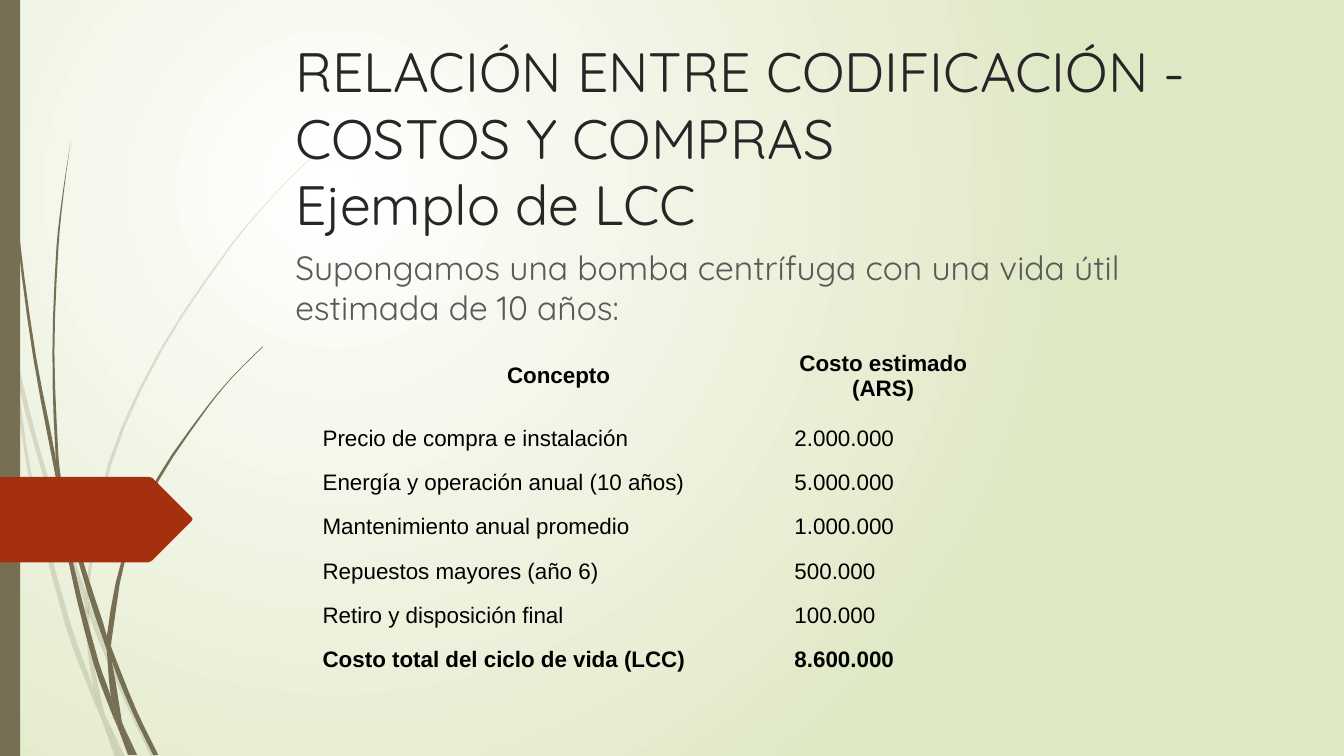
"""Builds the life cycle cost (LCC) example slide."""
from dataclasses import dataclass

from lxml import etree
from pptx import Presentation
from pptx.dml.color import RGBColor
from pptx.enum.shapes import MSO_SHAPE
from pptx.enum.text import MSO_ANCHOR, PP_ALIGN
from pptx.oxml.ns import qn
from pptx.util import Inches, Pt

RECTANGLE = MSO_SHAPE.RECTANGLE
TOP, MIDDLE, BOTTOM = MSO_ANCHOR.TOP, MSO_ANCHOR.MIDDLE, MSO_ANCHOR.BOTTOM
LEFT, CENTER = PP_ALIGN.LEFT, PP_ALIGN.CENTER

TITLE = "RELACIÓN ENTRE CODIFICACIÓN - COSTOS Y COMPRAS\vEjemplo de LCC"
PREMISE = "Supongamos una bomba centrífuga con una vida útil estimada de 10 años:"
COSTS = [
    ("Concepto", "Costo estimado (ARS)"),
    ("Precio de compra e instalación", "2.000.000"),
    ("Energía y operación anual (10 años)", "5.000.000"),
    ("Mantenimiento anual promedio", "1.000.000"),
    ("Repuestos mayores (año 6)", "500.000"),
    ("Retiro y disposición final", "100.000"),
    ("Costo total del ciclo de vida (LCC)", "8.600.000"),
]

# Each blade of grass is a left and a right edge, both from top to bottom.
PALE_BLADES = [
    ([(0, 2.99), (0.1, 3.44), (0.11, 3.5)], [(0, 2.82), (0.09, 3.22), (0.11, 3.5)]),
    ([(0.14, 3.45), (0.17, 3.76), (0.36, 4.49), (0.58, 5.22), (0.84, 5.99)],
     [(0.14, 3.45), (0.36, 4.33), (0.62, 5.2), (0.85, 5.86)]),
    ([(0.88, 5.96), (0.88, 6.1), (1.23, 6.94), (1.5, 7.51)],
     [(0.88, 5.96), (0.92, 6.07), (1.27, 6.92), (1.55, 7.51)]),
    ([(1.05, 7.11), (1.19, 7.51)], [(1.05, 7.11), (1.24, 7.51)]),
    ([(0.11, 3.5), (0.28, 4.7), (0.65, 6.21), (0.92, 6.93), (1.01, 7.14)],
     [(0.11, 3.5), (0.17, 3.76), (0.31, 4.69), (0.7, 6.19), (0.93, 6.83),
      (0.99, 7.07), (1.01, 7.14)]),
    ([(0.84, 5.99), (0.87, 6.46), (0.93, 6.83), (0.96, 6.92), (1.05, 7.11)],
     [(0.84, 5.99), (0.88, 6.08), (0.91, 6.46), (1.03, 7.06), (1.05, 7.11)]),
    ([(3.12, 1.53), (2.89, 1.75), (2.68, 1.97), (2.28, 2.44), (1.58, 3.48),
      (1.07, 4.61), (0.85, 5.84), (0.88, 5.96)],
     [(3.12, 1.54), (2.9, 1.75), (2.68, 1.98), (2.29, 2.45), (1.6, 3.49),
      (1.1, 4.62), (0.88, 5.84), (0.88, 5.96)]),
    ([(1.01, 7.14), (1.14, 7.51)], [(1.01, 7.14), (1.19, 7.51)]),
    ([(0.85, 5.86), (0.84, 5.99), (0.88, 6.1)], [(0.85, 5.86), (0.88, 5.96), (0.88, 6.1)]),
    ([(0.93, 6.83), (0.99, 7.07), (1.01, 7.14), (1.19, 7.51)],
     [(0.93, 6.83), (0.96, 6.92), (1.05, 7.11), (1.19, 7.51)]),
]
DARK_BLADES = [
    ([(0.03, 0), (0.04, 0.48), (0.07, 1.1), (0.17, 2.33), (0.33, 3.55),
      (0.56, 4.77), (0.57, 4.81)],
     [(0.04, 0), (0.05, 0.48), (0.08, 1.09), (0.19, 2.32), (0.36, 3.55),
      (0.55, 4.53), (0.57, 4.81)]),
    ([(0.6, 4.72), (0.64, 5.05), (0.88, 5.92), (1.06, 6.45)],
     [(0.6, 4.72), (0.75, 5.32), (0.93, 5.9), (1.06, 6.31), (1.06, 6.45)]),
    ([(1.1, 6.41), (1.11, 6.56), (1.32, 7.08), (1.52, 7.49)],
     [(1.1, 6.41), (1.13, 6.49), (1.36, 7.06), (1.57, 7.49)]),
    ([(0.57, 4.77), (0.68, 5.57), (0.93, 6.59), (1.11, 7.08), (1.17, 7.22)],
     [(0.57, 4.77), (0.64, 5.05), (0.72, 5.56), (0.98, 6.57), (1.1, 6.91),
      (1.16, 7.17), (1.17, 7.22)]),
    ([(0.7, 1.41), (0.62, 1.93), (0.56, 2.45), (0.52, 3.49), (0.55, 4.49), (0.6, 4.72)],
     [(0.7, 1.41), (0.63, 1.93), (0.58, 2.45), (0.54, 3.49), (0.58, 4.53), (0.6, 4.72)]),
    ([(1.22, 7.19), (1.33, 7.49)], [(1.22, 7.19), (1.36, 7.49)]),
    ([(0.55, 4.49), (0.57, 4.77), (0.64, 5.05)], [(0.55, 4.49), (0.6, 4.72), (0.64, 5.05)]),
    ([(2.6, 3.44), (2.31, 3.73), (2.04, 4.05), (1.56, 4.74), (1.22, 5.51),
      (1.06, 6.31), (1.1, 6.41)],
     [(2.61, 3.44), (2.31, 3.74), (2.05, 4.06), (1.58, 4.76), (1.25, 5.52),
      (1.11, 6.33), (1.1, 6.41)]),
    ([(1.17, 7.22), (1.27, 7.49)], [(1.17, 7.22), (1.31, 7.49)]),
    ([(1.06, 6.45), (1.1, 6.91), (1.16, 7.06), (1.22, 7.19)],
     [(1.06, 6.45), (1.11, 6.56), (1.21, 7.16), (1.22, 7.19)]),
    ([(1.06, 6.31), (1.06, 6.45), (1.11, 6.56)], [(1.06, 6.31), (1.1, 6.41), (1.11, 6.56)]),
    ([(1.1, 6.91), (1.16, 7.17), (1.17, 7.22), (1.3, 7.49)],
     [(1.1, 6.91), (1.16, 7.06), (1.22, 7.19), (1.33, 7.49)]),
]
ARROW = [(0, 4.73), (1.47, 4.73), (1.51, 4.74), (1.9, 5.13), (1.91, 5.15),
         (1.9, 5.17), (1.51, 5.56), (1.47, 5.58), (0, 5.58)]

WIDTH, HEIGHT = 13.33, 7.5
TEXT_LEFT, TEXT_WIDTH = 2.83, 9.75
TITLE_TOP, PREMISE_TOP, PREMISE_BOTTOM = 0.31, 2.4, 7.01
TABLE_LEFT, TABLE_TOP = 3.2, 3.33
COLUMNS, HEADER_ROW, COST_ROW = (4.68, 1.76), 0.8, 0.44
STEPS = 3


@dataclass(frozen=True)
class Theme:
    """Colours, fonts and type sizes."""
    glow: str = "FFFFFF"
    ground: str = "DFE8C4"
    grass: str = "766F54"
    arrow: str = "A53010"
    title: str = "262626"
    premise: str = "595959"
    cost: str = "000000"
    display_font: str = "Quicksand"
    table_font: str = "Arial"
    title_size: float = 39.6
    premise_size: float = 24
    cost_size: float = 16
    plain_table: str = "{2D5ABB26-0587-4C30-8999-92F81FD0307C}"


THEME = Theme()


def write(frame, text, *, font, size, color, bold=False, align=LEFT, before=0):
    """Puts formatted text in a text frame."""
    frame.word_wrap = True
    paragraph = frame.paragraphs[0]
    paragraph.text = text
    paragraph.alignment, paragraph.space_before = align, Pt(before)
    for run in paragraph.runs:
        run.font.name, run.font.size, run.font.bold = font, Pt(size), bold
        run.font.color.rgb = RGBColor.from_string(color)


def paint(shape, color, alpha=100):
    """Gives a shape a flat fill without line or shadow."""
    shape.shadow.inherit = False
    shape.line.fill.background()
    shape.fill.solid()
    shape.fill.fore_color.rgb = RGBColor.from_string(color)
    if alpha < 100:
        tone = shape.element.spPr.find(".//" + qn("a:srgbClr"))
        etree.SubElement(tone, qn("a:alpha"), val=str(alpha * 1000))


def outline(slide, points, color, alpha=100):
    """Draws a closed outline through points in inches."""
    corners = [(Inches(x), Inches(y)) for x, y in points]
    builder = slide.shapes.build_freeform(*corners[0])
    builder.add_line_segments(corners[1:], close=True)
    paint(builder.convert_to_shape(), color, alpha)


def smooth_edge(points):
    """Samples a curve running through all the points."""
    padded = [points[0], *points, points[-1]]
    curve = []
    for before, start, end, after in zip(padded, padded[1:], padded[2:], padded[3:]):
        span = end[1] - start[1]
        slope_in = (end[0] - before[0]) / (end[1] - before[1])
        slope_out = (after[0] - start[0]) / (after[1] - start[1])
        for step in range(STEPS):
            t = step / STEPS
            x = ((2 * t**3 - 3 * t**2 + 1) * start[0] + (3 * t**2 - 2 * t**3) * end[0]
                 + span * ((t**3 - 2 * t**2 + t) * slope_in + (t**3 - t**2) * slope_out))
            curve.append((x, start[1] + t * span))
    return curve + [points[-1]]


def draw_backdrop(slide):
    """Draws the circular glow, the grass, the side band and the arrow."""
    fill = slide.background.fill
    fill.gradient()
    for stop, color in zip(fill.gradient_stops, (THEME.glow, THEME.ground)):
        stop.color.rgb = RGBColor.from_string(color)
    linear = slide.element.find(".//" + qn("a:lin"))
    circle = etree.Element(qn("a:path"), attrib={"path": "circle"})
    etree.SubElement(circle, qn("a:fillToRect"), l="50000", t="50000", r="100000", b="100000")
    linear.getparent().replace(linear, circle)
    for blades, alpha in ((PALE_BLADES, 20), (DARK_BLADES, 100)):
        for left, right in blades:
            outline(slide, smooth_edge(left) + smooth_edge(right)[::-1], THEME.grass, alpha)
    paint(slide.shapes.add_shape(RECTANGLE, 0, 0, Inches(0.2), Inches(HEIGHT)), THEME.grass)
    outline(slide, ARROW, THEME.arrow)


def draw_text(slide, text, top, bottom, anchor, **look):
    """Adds one text in the main column."""
    frame = slide.shapes.add_textbox(Inches(TEXT_LEFT), Inches(top), Inches(TEXT_WIDTH),
                                     Inches(bottom - top)).text_frame
    frame.vertical_anchor = anchor
    write(frame, text, font=THEME.display_font, **look)


def draw_costs(slide):
    """Adds the cost table."""
    heights = [HEADER_ROW] + [COST_ROW] * (len(COSTS) - 1)
    table = slide.shapes.add_table(
        len(COSTS), len(COLUMNS), Inches(TABLE_LEFT), Inches(TABLE_TOP),
        Inches(sum(COLUMNS)), Inches(sum(heights))).table
    table.first_row = table.horz_banding = False
    table._tbl.tblPr.find(qn("a:tableStyleId")).text = THEME.plain_table
    for column, width in zip(table.columns, COLUMNS):
        column.width = Inches(width)
    for index, (row, height) in enumerate(zip(table.rows, heights)):
        row.height = Inches(height)
        for cell, text in zip(row.cells, COSTS[index]):
            cell.margin_left = cell.margin_right = cell.margin_top = cell.margin_bottom = 0
            cell.vertical_anchor = MIDDLE
            cell.fill.background()
            write(cell.text_frame, text, font=THEME.table_font, size=THEME.cost_size,
                  color=THEME.cost, bold=index in (0, len(COSTS) - 1),
                  align=LEFT if index else CENTER)


deck = Presentation()
deck.slide_width, deck.slide_height = Inches(WIDTH), Inches(HEIGHT)
lcc_slide = deck.slides.add_slide(deck.slide_layouts[6])
draw_backdrop(lcc_slide)
draw_text(lcc_slide, TITLE, TITLE_TOP, PREMISE_TOP, BOTTOM,
          size=THEME.title_size, color=THEME.title)
draw_text(lcc_slide, PREMISE, PREMISE_TOP, PREMISE_BOTTOM, TOP,
          size=THEME.premise_size, color=THEME.premise, before=10)
draw_costs(lcc_slide)
deck.save("out.pptx")
